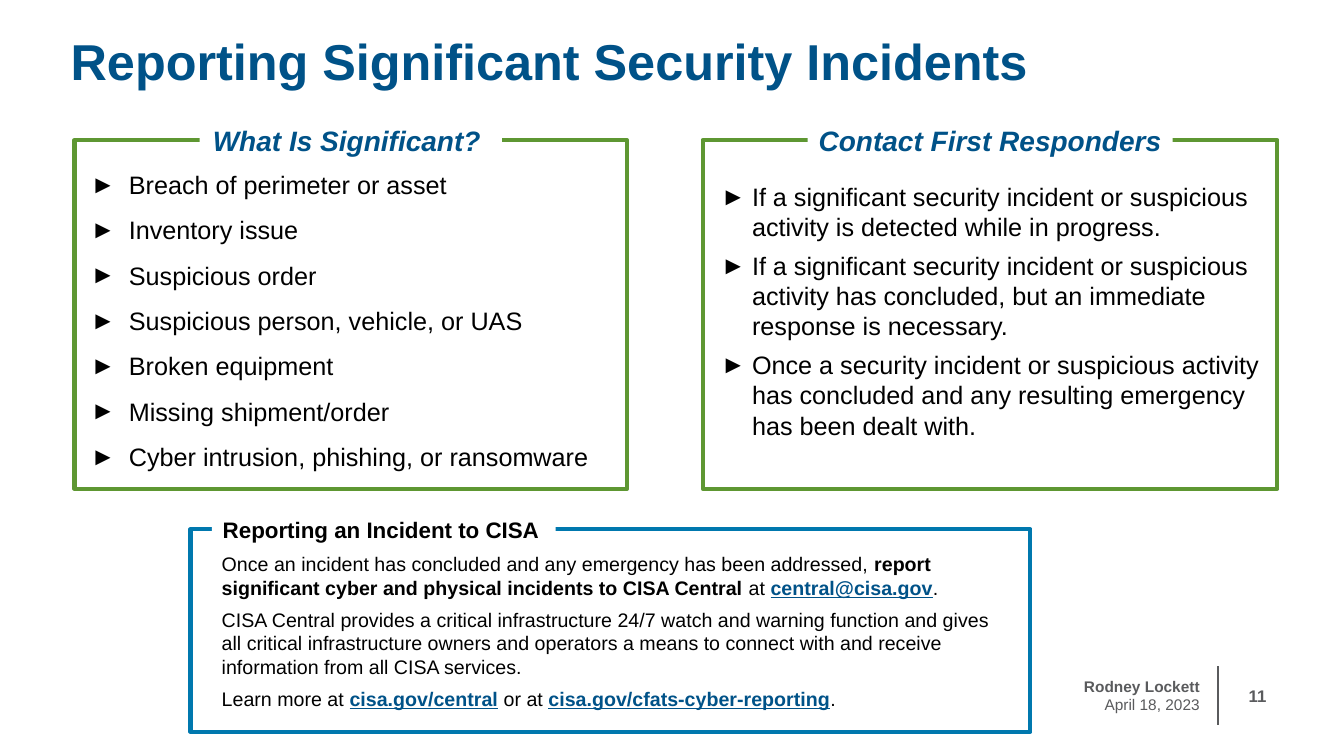
from dataclasses import dataclass
from pptx import Presentation
from pptx.dml.color import RGBColor
from pptx.enum.shapes import MSO_CONNECTOR, MSO_SHAPE
from pptx.enum.text import MSO_ANCHOR, MSO_AUTO_SIZE, PP_ALIGN
from pptx.oxml.ns import qn
from pptx.util import Inches, Pt
from lxml.etree import SubElement


@dataclass(frozen=True)
class Theme:
    font: str = "Arial"
    navy: str = "005288"
    blue: str = "0078AE"
    green: str = "5E9732"
    gray: str = "5A5B5D"
    black: str = "000000"
    white: str = "FFFFFF"
    title: int = 36
    head: int = 20
    body: int = 18
    label: int = 16
    note: int = 14
    page: int = 12
    foot: int = 11


T = Theme()

# Content: runs are (text, style), with style "", "bold" or "link"
TITLE = "Reporting Significant Security Incidents"
SIGNS = [
    "Breach of perimeter or asset",
    "Inventory issue",
    "Suspicious order",
    "Suspicious person, vehicle, or UAS",
    "Broken equipment",
    "Missing shipment/order",
    "Cyber intrusion, phishing, or ransomware",
]
CALLS = [
    "If a significant security incident or suspicious activity is detected while in progress.",
    "If a significant security incident or suspicious activity has concluded, "
    "but an immediate response is necessary.",
    "Once a security incident or suspicious activity has concluded "
    "and any resulting emergency has been dealt with.",
]
REPORT = [
    [("Once an incident has concluded and any emergency has been addressed, ", ""),
     ("report significant cyber and physical incidents to CISA Central ", "bold"),
     ("at ", ""), ("central@cisa.gov", "link"), (".", "")],
    [("CISA Central provides a critical infrastructure 24/7 watch and warning "
      "function and gives all critical infrastructure owners and operators a "
      "means to connect with and receive information from all CISA services.", "")],
    [("Learn more at ", ""), ("cisa.gov/central", "link"), (" or at ", ""),
     ("cisa.gov/cfats-cyber-reporting", "link"), (".", "")],
]
FOOT = ["Rodney Lockett", "April 18, 2023"]
PAGE = "11"

# Panels: box (x, y, w, h), tag size and text inset, in percent of the slide
PANELS = [
    dict(head="What Is Significant? ", lines=SIGNS, box=(5.55, 18.53, 41.1, 46.13),
         tag=(22.5, 5.87), inset=(0.45, 1.2), edge=T.green, indent=0.38, lead=1.5, after=0),
    dict(head="Contact First Responders", lines=CALLS, box=(52.29, 18.53, 42.76, 46.13),
         tag=(27.16, 5.87), inset=(0.6, 4.8), edge=T.green, indent=0.31, lead=1, after=6),
    dict(head="Reporting an Incident to CISA ", lines=REPORT, box=(14.18, 70, 62.49, 26.8),
         tag=(25.58, 4.93), inset=(1.58, 2.4), edge=T.blue, indent=0, lead=1, after=6),
]

deck = Presentation()
deck.slide_width, deck.slide_height = Inches(13.33), Inches(7.5)
slide = deck.slides.add_slide(deck.slide_layouts[5])
shapes = slide.shapes


def place(x, y, w, h):
    """Turn percent of the slide into lengths."""
    return [int(v * side / 100) for v, side in
            zip((x, y, w, h), (deck.slide_width, deck.slide_height) * 2)]


def style(font, size, color, bold=False, italic=False):
    font.name, font.size, font.bold, font.italic = T.font, Pt(size), bold, italic
    font.color.rgb = RGBColor.from_string(color)


def block(area, anchor=MSO_ANCHOR.TOP):
    frame = shapes.add_textbox(*area).text_frame
    frame.word_wrap = True
    frame.vertical_anchor = anchor
    return frame


def paras(frame, lines):
    """Yield one paragraph per line of content."""
    for i, line in enumerate(lines):
        yield (frame.add_paragraph() if i else frame.paragraphs[0]), line


def rect(area, fill, edge=None):
    box = shapes.add_shape(MSO_SHAPE.RECTANGLE, *area)
    box.shadow.inherit = False
    box.fill.solid()
    box.fill.fore_color.rgb = RGBColor.from_string(fill)
    if edge:
        box.line.color.rgb = RGBColor.from_string(edge)
        box.line.width = Pt(3)
    else:
        box.line.fill.background()
    return box


def bullet(para, indent):
    props = para._p.get_or_add_pPr()
    props.set("marL", str(Inches(indent)))
    props.set("indent", str(-Inches(indent)))
    SubElement(props, qn("a:buFont"), typeface=T.font)
    SubElement(props, qn("a:buChar"), char="►")


def panel(head, lines, box, tag, inset, edge, indent, lead, after):
    x, y, w, h = box
    dx, dy = inset
    tw, th = tag
    rect(place(*box), T.white, edge)

    # Body text
    frame = block(place(x + dx, y + dy, w - 2 * dx, h - 2 * dy))
    for para, line in paras(frame, lines):
        para.line_spacing, para.space_after = lead, Pt(after)
        if indent:
            bullet(para, indent)
            para.text = line
            style(para.font, T.body, T.black)
            continue
        for text, kind in line:
            run = para.add_run()
            run.text = text
            link = kind == "link"
            style(run.font, T.note, T.navy if link else T.black, bool(kind))
            run.font.underline = link

    # Heading that breaks the top edge
    left = x + (w - tw) / 2 if indent else x + dx
    label = rect(place(left, y - th / 2, tw, th), T.white).text_frame
    label.word_wrap = True
    para = label.paragraphs[0]
    para.text, para.alignment = head, PP_ALIGN.CENTER
    if indent:
        style(para.font, T.head, T.navy, True, True)
    else:
        style(para.font, T.label, T.black, True)


# Title
title = shapes.title
title.left, title.top, title.width, title.height = place(0, 0, 100, 16.67)
frame = title.text_frame
frame.auto_size, frame.vertical_anchor = MSO_AUTO_SIZE.NONE, MSO_ANCHOR.TOP
frame.margin_left, frame.margin_top = Inches(0.7), Inches(0.3)
frame.margin_right = frame.margin_bottom = Inches(0.1)
frame.text = TITLE
frame.paragraphs[0].alignment = PP_ALIGN.LEFT
style(frame.paragraphs[0].font, T.title, T.navy, True)

# Panels
for part in PANELS:
    panel(**part)

# Footer: name and date, rule, page number
x, y, w, h = place(90.62, 88.13, 4.35, 7.73)
rule = shapes.add_connector(MSO_CONNECTOR.STRAIGHT, x, y, x, y + h)
rule.line.color.rgb = RGBColor.from_string(T.gray)
rule.line.width = Pt(1)
SubElement(rule._element.spPr, qn("a:effectLst"))
for area, lines, size in [(place(67.52, 88.13, 22.5, 7.73), FOOT, T.foot),
                          ((x, y, w, h), [PAGE], T.page)]:
    for para, line in paras(block(area, MSO_ANCHOR.MIDDLE), lines):
        para.text, para.alignment = line, PP_ALIGN.RIGHT
        style(para.font, size, T.gray, line != FOOT[1])

deck.save("out.pptx")
